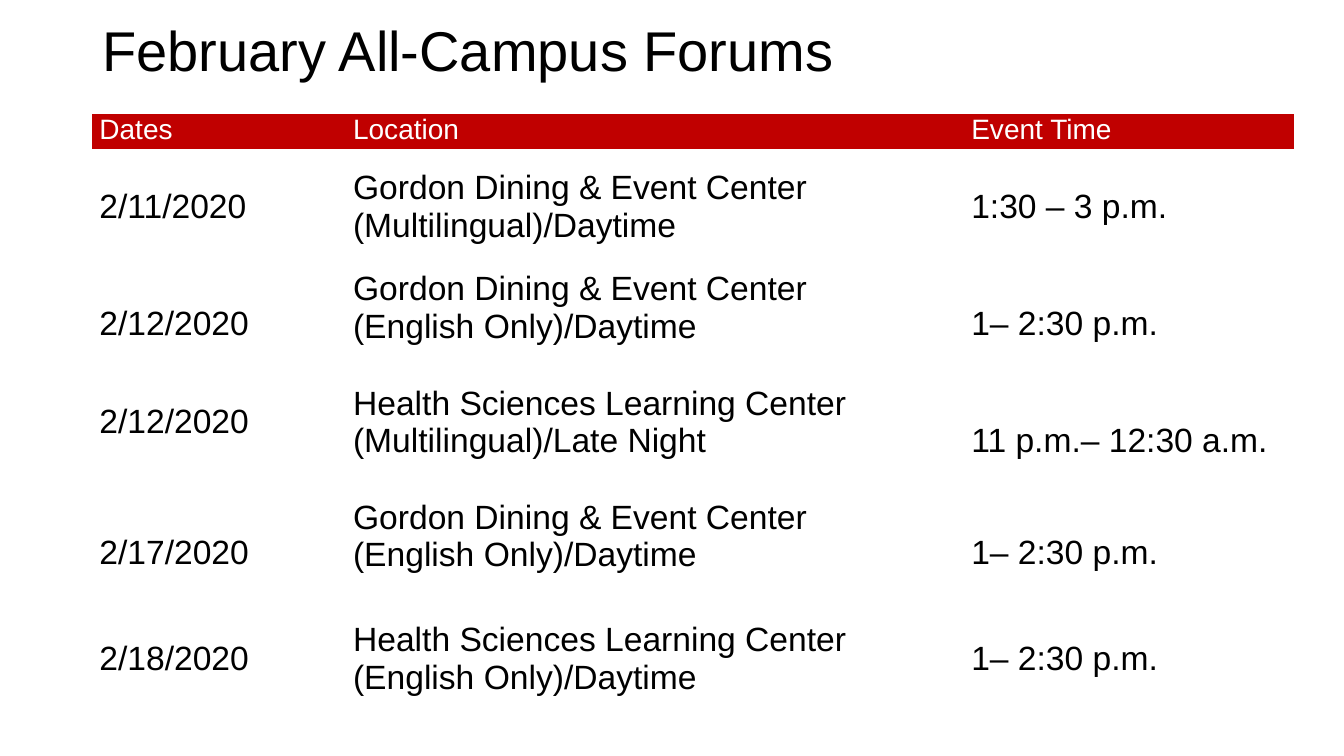
from pptx import Presentation
from pptx.dml.color import RGBColor
from pptx.enum.text import MSO_ANCHOR, PP_ALIGN
from pptx.util import Inches, Pt

COLS, ROWS = 160, 90
NO_GRID_STYLE = "{2D5ABB26-0587-4C30-8999-92F81FD0307C}"
RED, WHITE, BLACK = "C00000", "FFFFFF", "000000"


def color(value):
    return RGBColor.from_string(value)


class Deck:
    font = "Arial"

    def __init__(self):
        self.prs = Presentation()
        self.prs.slide_width = Inches(13.333)
        self.prs.slide_height = Inches(7.5)
        self.s = self.prs.slides.add_slide(self.prs.slide_layouts[5])

    def x(self, cols):
        return round(self.prs.slide_width * cols / COLS)

    def y(self, rows):
        return round(self.prs.slide_height * rows / ROWS)

    def add_lines(self, tf, lines, size, fill):
        for i, line in enumerate(lines):
            p = tf.add_paragraph() if i else tf.paragraphs[0]
            p.alignment = PP_ALIGN.LEFT
            r = p.add_run()
            r.text = line
            r.font.name = self.font
            r.font.size = Pt(size)
            r.font.color.rgb = color(fill)

    def title(self, text, left, top, width, height):
        sp = self.s.shapes.title
        sp.left, sp.top = self.x(left), self.y(top)
        sp.width, sp.height = self.x(width), self.y(height)
        tf = sp.text_frame
        tf.word_wrap = True
        tf.vertical_anchor = MSO_ANCHOR.MIDDLE
        self.add_lines(tf, [text], 40, BLACK)
        tf.paragraphs[0].line_spacing = 0.9

    def cell(self, cell, lines, header, lift):
        cell.margin_left = cell.margin_right = Inches(0.07)
        cell.margin_top, cell.margin_bottom = 0, self.y(lift)
        if header:
            cell.fill.solid()
            cell.fill.fore_color.rgb = color(RED)
            self.add_lines(cell.text_frame, lines, 20, WHITE)
        else:
            cell.fill.background()
            cell.vertical_anchor = MSO_ANCHOR.MIDDLE
            self.add_lines(cell.text_frame, lines, 24, BLACK)

    def table(self, data, left, top, widths, heights, lifts):
        frame = self.s.shapes.add_table(
            len(heights), len(widths), self.x(left), self.y(top),
            self.x(sum(widths)), self.y(sum(heights)))
        table = frame.table
        table.first_row = table.horz_banding = False
        table._tbl.tblPr[0].text = NO_GRID_STYLE
        for column, width in zip(table.columns, widths):
            column.width = self.x(width)
        for i, (row, height) in enumerate(zip(table.rows, heights)):
            row.height = self.y(height)
            for j, text in enumerate(data[i]):
                self.cell(table.cell(i, j), text.split("\n"), i == 0, lifts.get((i, j), 0))


def main():
    deck = Deck()
    deck.title("February All-Campus Forums", 11, 2.16, 138, 8.4)
    gordon = "Gordon Dining & Event Center\n"
    health = "Health Sciences Learning Center\n"
    forums = [
        ("Dates", "Location", "Event Time"),
        ("2/11/2020", gordon + "(Multilingual)/Daytime", "1:30 – 3 p.m."),
        ("2/12/2020", gordon + "(English Only)/Daytime", "1– 2:30 p.m."),
        ("2/12/2020", health + "(Multilingual)/Late Night", "11 p.m.– 12:30 a.m."),
        ("2/17/2020", gordon + "(English Only)/Daytime", "1– 2:30 p.m."),
        ("2/18/2020", health + "(English Only)/Daytime", "1– 2:30 p.m."),
    ]
    lifts = {(2, 1): 3.8, (3, 0): 4.4, (3, 1): 4.4, (4, 1): 3.8}
    deck.table(forums, 11, 13.6, [30.2, 73.6, 39.2],
               [4.1] + [13.9] * 3 + [12.6] * 2, lifts)
    deck.prs.save("out.pptx")


if __name__ == "__main__":
    main()
